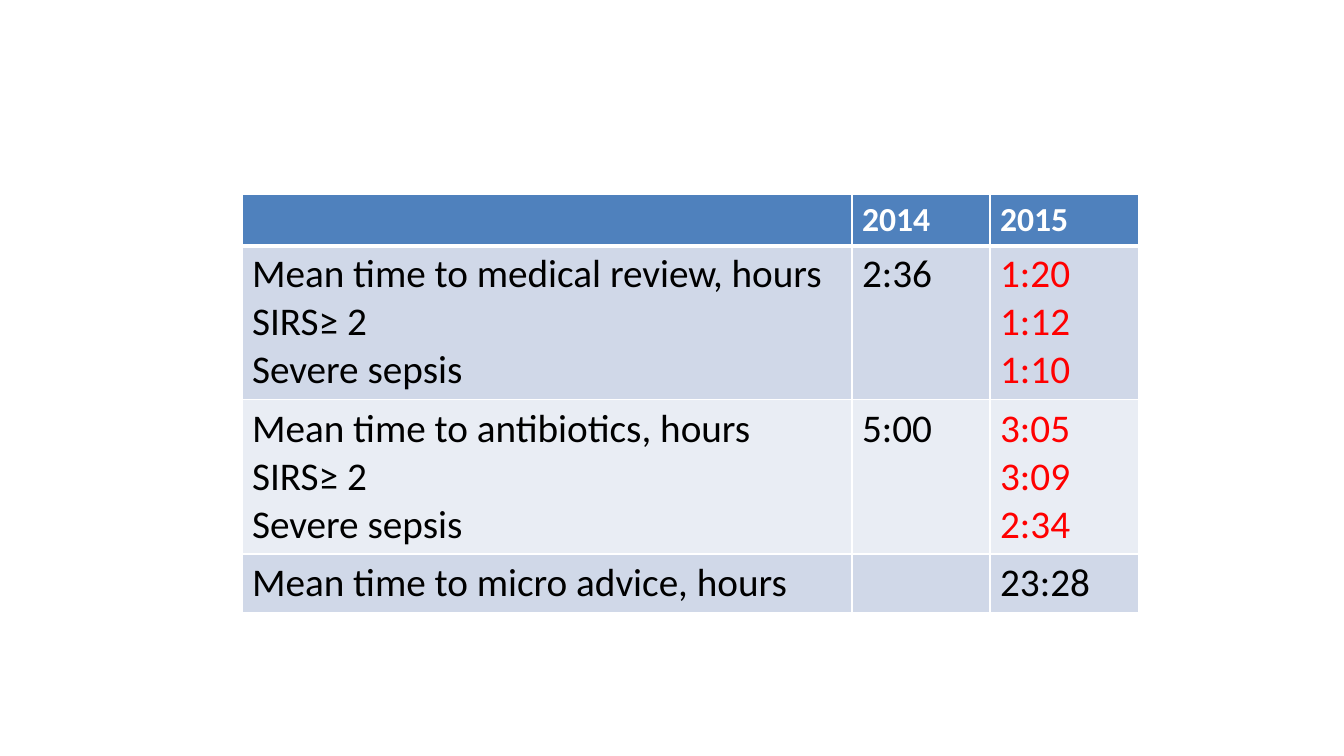
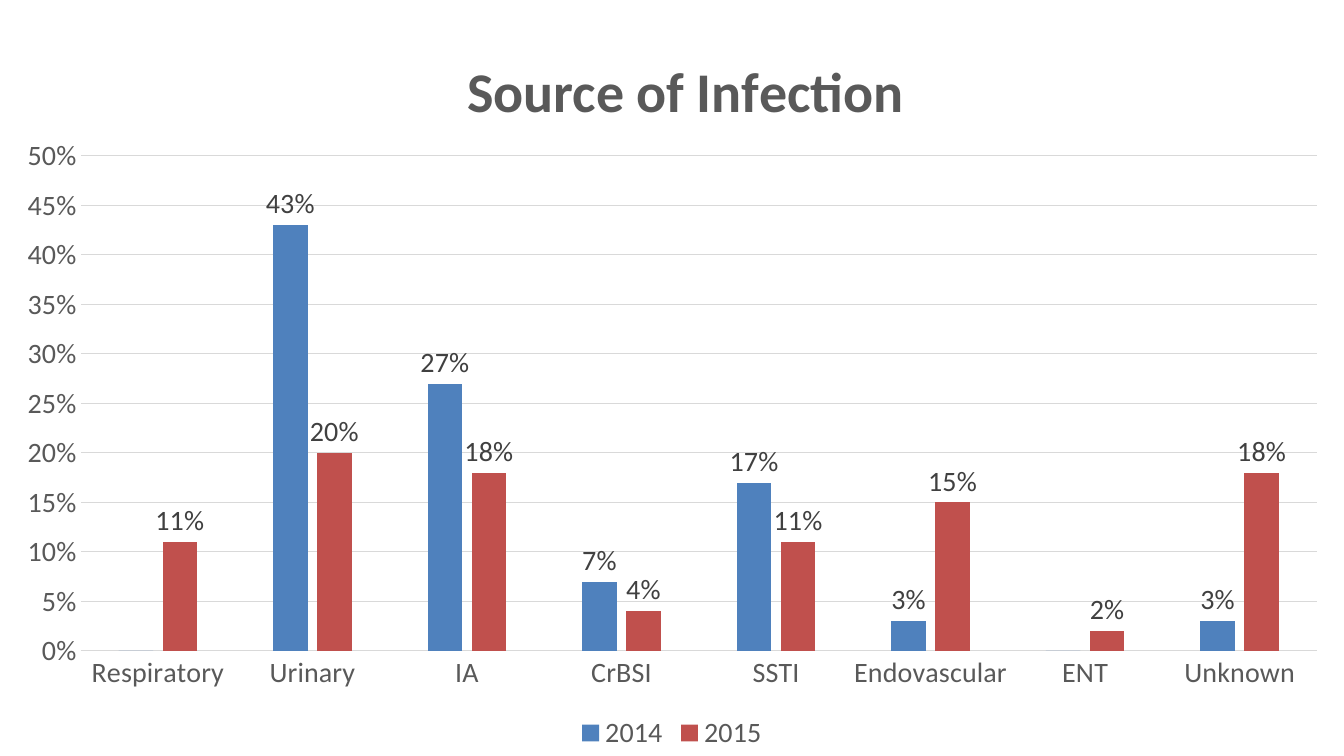
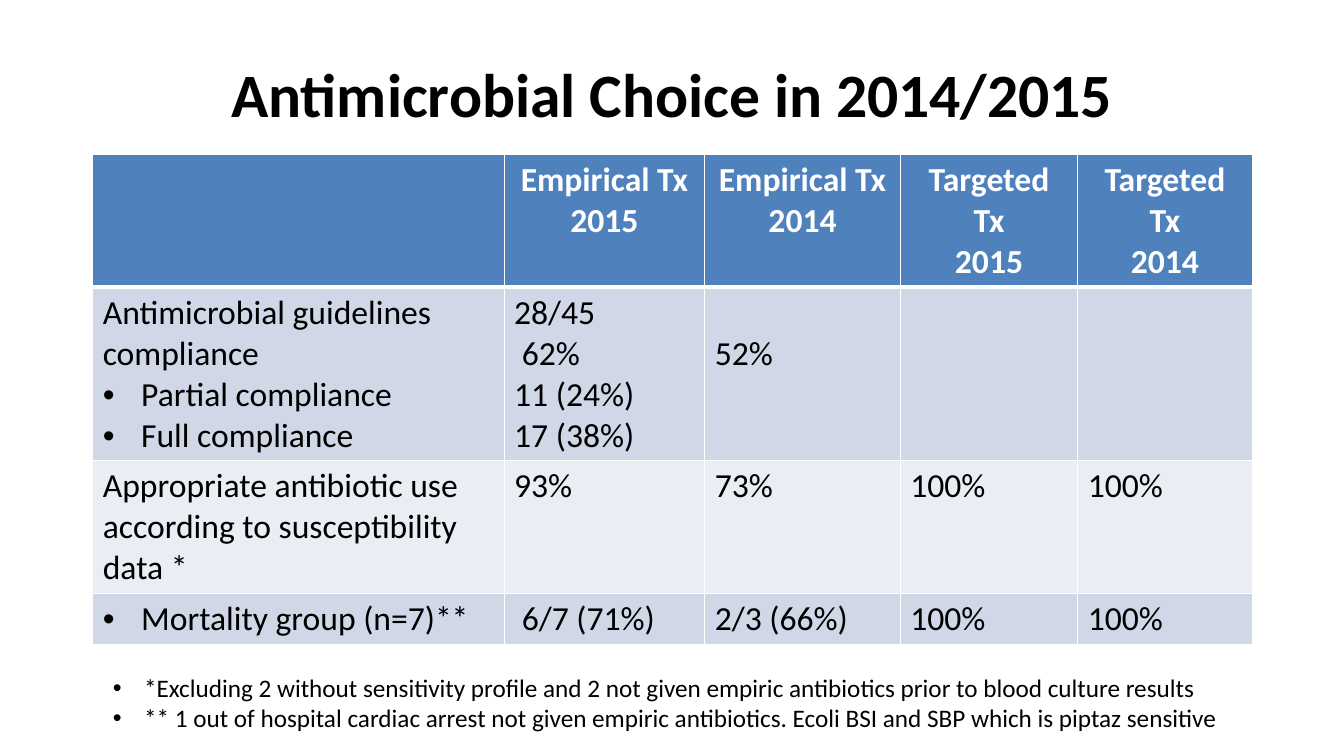
from lxml import etree
from pptx import Presentation
from pptx import util as u
from pptx.chart.data import CategoryChartData
from pptx.dml.color import RGBColor
from pptx.enum import chart as charts, text
from pptx.oxml.ns import qn

FONT = "Calibri"
BLACK, WHITE, RED = "000000", "FFFFFF", "FF0000"
HEADER, BANDS = "4F81BD", ("D0D8E8", "E9EDF4")
GREY, LABEL_GREY, GRID = "595959", "404040", "D9D9D9"
SERIES = (HEADER, "C0504D")
BULLET = "• "

REVIEW_TIMES = [
    ["", "2014", "2015"],
    ["Mean time to medical review, hours\nSIRS≥ 2\nSevere sepsis", "2:36", "1:20\n1:12\n1:10"],
    ["Mean time to antibiotics, hours\nSIRS≥ 2\nSevere sepsis", "5:00", "3:05\n3:09\n2:34"],
    ["Mean time to micro advice, hours", "", "23:28"],
]
SOURCES = ["Respiratory", "Urinary", "IA", "CrBSI", "SSTI", "Endovascular", "ENT", "Unknown"]
SHARES = {
    "2014": [0, 0.43, 0.27, 0.07, 0.17, 0.03, 0, 0.03],
    "2015": [0.11, 0.2, 0.18, 0.04, 0.11, 0.15, 0.02, 0.18],
}
CHOICES = [
    ["", "Empirical Tx\n2015", "Empirical Tx\n2014", "Targeted Tx\n2015", "Targeted Tx\n2014"],
    ["Antimicrobial guidelines compliance\n• Partial compliance\n• Full compliance",
     "28/45\n 62%\n11 (24%)\n17 (38%)", "52%", "", ""],
    ["Appropriate antibiotic use according to susceptibility data *", "93%", "73%", "100%", "100%"],
    ["• Mortality group (n=7)**", " 6/7 (71%)", "2/3 (66%)", "100%", "100%"],
]
FOOTNOTES = (
    "• *Excluding 2 without sensitivity profile and 2 not given empiric antibiotics"
    " prior to blood culture results\n"
    "• ** 1 out of hospital cardiac arrest not given empiric antibiotics."
    " Ecoli BSI and SBP which is piptaz sensitive"
)


def rgb(code):
    """Return the colour for a hex string."""
    return RGBColor.from_string(code)


def style_font(font, size, color, bold=False):
    """Apply the deck font with a size, colour and weight."""
    font.name, font.size, font.bold = FONT, u.Pt(size), bold
    font.color.rgb = rgb(color)


def write(frame, words, size, color=BLACK, bold=False, align=None, indent=0.38):
    """Fill a text frame, turning lines that start with a bullet into list items."""
    frame.text = words
    for paragraph in frame.paragraphs:
        if paragraph.text.startswith(BULLET):
            paragraph.text = paragraph.text.removeprefix(BULLET)
            props = paragraph._p.get_or_add_pPr()
            props.set("marL", str(u.Inches(indent)))
            props.set("indent", str(-u.Inches(indent)))
            etree.SubElement(props, qn("a:buFont"), typeface="Arial")
            etree.SubElement(props, qn("a:buChar"), char="•")
        paragraph.alignment = align
        for run in paragraph.runs:
            style_font(run.font, size, color, bold)


def add_text(slide, box, words, size, **style):
    """Add a wrapped text box and return its frame."""
    frame = slide.shapes.add_textbox(*map(u.Inches, box)).text_frame
    frame.word_wrap = True
    write(frame, words, size, **style)
    return frame


def outline_cell(cell, top, bottom):
    """Draw white cell borders, with the top and bottom widths in points."""
    props = cell._tc.get_or_add_tcPr()
    for side, width in zip("LRTB", (1, 1, top, bottom)):
        line = etree.SubElement(props, qn(f"a:ln{side}"), w=str(u.Pt(width)))
        fill = etree.SubElement(line, qn("a:solidFill"))
        etree.SubElement(fill, qn("a:srgbClr"), val=WHITE)


def add_banded_table(slide, corner, widths, heights, rows, body_size, header_align=None):
    """Add a table with a blue header over alternating bands."""
    box = (*corner, sum(widths), sum(heights))
    table = slide.shapes.add_table(len(rows), len(widths), *map(u.Inches, box)).table
    for column, width in zip(table.columns, widths):
        column.width = u.Inches(width)
    for r, (row, height) in enumerate(zip(rows, heights)):
        table.rows[r].height = u.Inches(height)
        for c, words in enumerate(row):
            cell = table.cell(r, c)
            outline_cell(cell, 3 if r == 1 else 1, 3 if r == 0 else 1)
            cell.fill.solid()
            cell.fill.fore_color.rgb = rgb(BANDS[(r - 1) % 2] if r else HEADER)
            if r:
                write(cell.text_frame, words, body_size)
            else:
                write(cell.text_frame, words, 24, WHITE, True, header_align)
    return table


def place_part(part, index, **fractions):
    """Give a chart part a fixed layout in fractions of the chart."""
    for old in part.findall(qn("c:layout")):
        part.remove(old)
    layout = etree.Element(qn("c:layout"))
    part.insert(index, layout)
    manual = etree.SubElement(layout, qn("c:manualLayout"))
    if "w" in fractions:
        etree.SubElement(manual, qn("c:layoutTarget"), val="inner")
    for axis in "xy":
        etree.SubElement(manual, qn(f"c:{axis}Mode"), val="edge")
    for name, value in fractions.items():
        etree.SubElement(manual, qn(f"c:{name}"), val=str(value))


def label_series(series, color):
    """Colour a series and label its values other than zero."""
    series.format.fill.solid()
    series.format.fill.fore_color.rgb = rgb(color)
    labels = series.data_labels
    labels.show_value = True
    labels.number_format, labels.number_format_is_linked = "0%", False
    labels.position = charts.XL_LABEL_POSITION.OUTSIDE_END
    style_font(labels.font, 20, LABEL_GREY)
    zeros = [i for i, value in enumerate(series.values) if value == 0]
    for place, index in enumerate(zeros):
        hidden = etree.Element(qn("c:dLbl"))
        etree.SubElement(hidden, qn("c:idx"), val=str(index))
        etree.SubElement(hidden, qn("c:delete"), val="1")
        labels._element.insert(place, hidden)


def add_source_chart(slide, box):
    """Add the clustered columns of infection sources by year."""
    data = CategoryChartData(number_format="0%")
    data.categories = SOURCES
    for year, shares in SHARES.items():
        data.add_series(year, shares)
    chart = slide.shapes.add_chart(
        charts.XL_CHART_TYPE.COLUMN_CLUSTERED, *map(u.Inches, box), data).chart
    style_font(chart.font, 20, BLACK)

    chart.has_title = True
    write(chart.chart_title.text_frame, "Source of Infection", 40, GREY, True)
    chart.chart_title.include_in_layout = False
    place_part(chart.chart_title._element, 1, x=0.34, y=0.05)
    place_part(chart._chartSpace.chart.plotArea, 0, x=0.06, y=0.2, w=0.92, h=0.66)

    chart.has_legend = True
    chart.legend.position = charts.XL_LEGEND_POSITION.BOTTOM
    chart.legend.include_in_layout = False
    style_font(chart.legend.font, 20, GREY)

    for axis in (chart.category_axis, chart.value_axis):
        axis.major_tick_mark = axis.minor_tick_mark = charts.XL_TICK_MARK.NONE
        style_font(axis.tick_labels.font, 20, GREY)
    values = chart.value_axis
    values.minimum_scale, values.maximum_scale, values.major_unit = 0, 0.5, 0.05
    values.tick_labels.number_format = "0%"
    values.tick_labels.number_format_is_linked = False
    values.format.line.fill.background()
    for line in (chart.category_axis.format.line, values.major_gridlines.format.line):
        line.color.rgb, line.width = rgb(GRID), u.Pt(0.75)

    plot = chart.plots[0]
    plot.gap_width, plot.overlap, plot.vary_by_categories = 219, -27, False
    for series, color in zip(plot.series, SERIES):
        label_series(series, color)


def build_review_times(slide):
    """Build the slide of mean times to review and treatment."""
    table = add_banded_table(slide, (2.4, 1.93), (6.05, 1.37, 1.47),
                             (0.5, 1.53, 1.53, 0.57), REVIEW_TIMES, 28)
    for r in (1, 2):
        write(table.cell(r, 2).text_frame, REVIEW_TIMES[r][2], 28, RED)


def build_sources(slide):
    """Build the full-slide chart of infection sources."""
    add_source_chart(slide, (0, 0.06, 13.33, 7.44))


def build_choices(slide):
    """Build the slide of antimicrobial choice with its footnotes."""
    title = add_text(slide, (0.67, 0.3, 12, 1.25), "Antimicrobial Choice in 2014/2015", 44,
                     bold=True, align=text.PP_ALIGN.CENTER)
    title.vertical_anchor = text.MSO_ANCHOR.MIDDLE
    table = add_banded_table(slide, (0.92, 1.53), (4.08, 1.99, 1.94, 1.76, 1.73),
                             (1.32, 1.72, 1.32, 0.51), CHOICES, 24, text.PP_ALIGN.CENTER)
    table.cell(1, 2).margin_top = u.Inches(0.46)
    add_text(slide, (1.02, 6.62, 12.09, 0.71), FOOTNOTES, 18, indent=0.31)


def main():
    """Build and save the deck."""
    deck = Presentation()
    deck.slide_width, deck.slide_height = u.Inches(13.33), u.Inches(7.5)
    for build in (build_review_times, build_sources, build_choices):
        build(deck.slides.add_slide(deck.slide_layouts[6]))
    deck.save("out.pptx")


if __name__ == "__main__":
    main()
